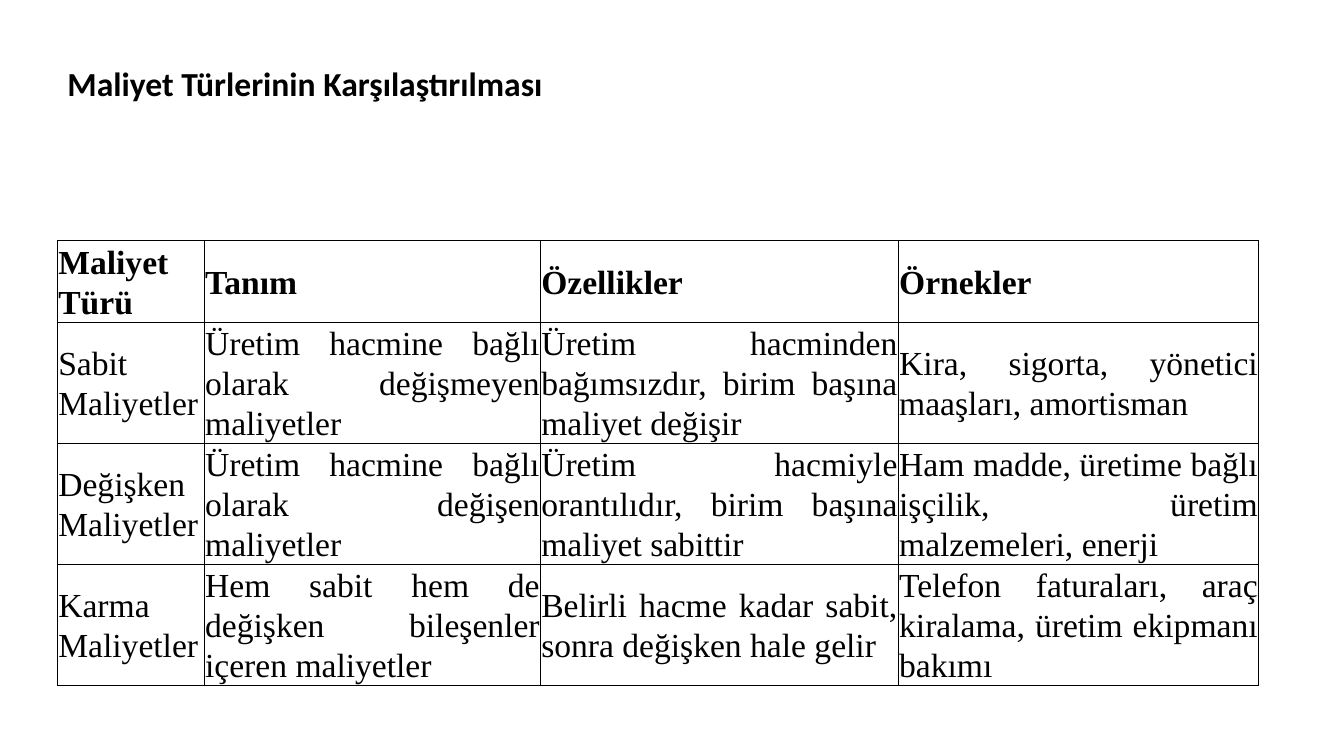
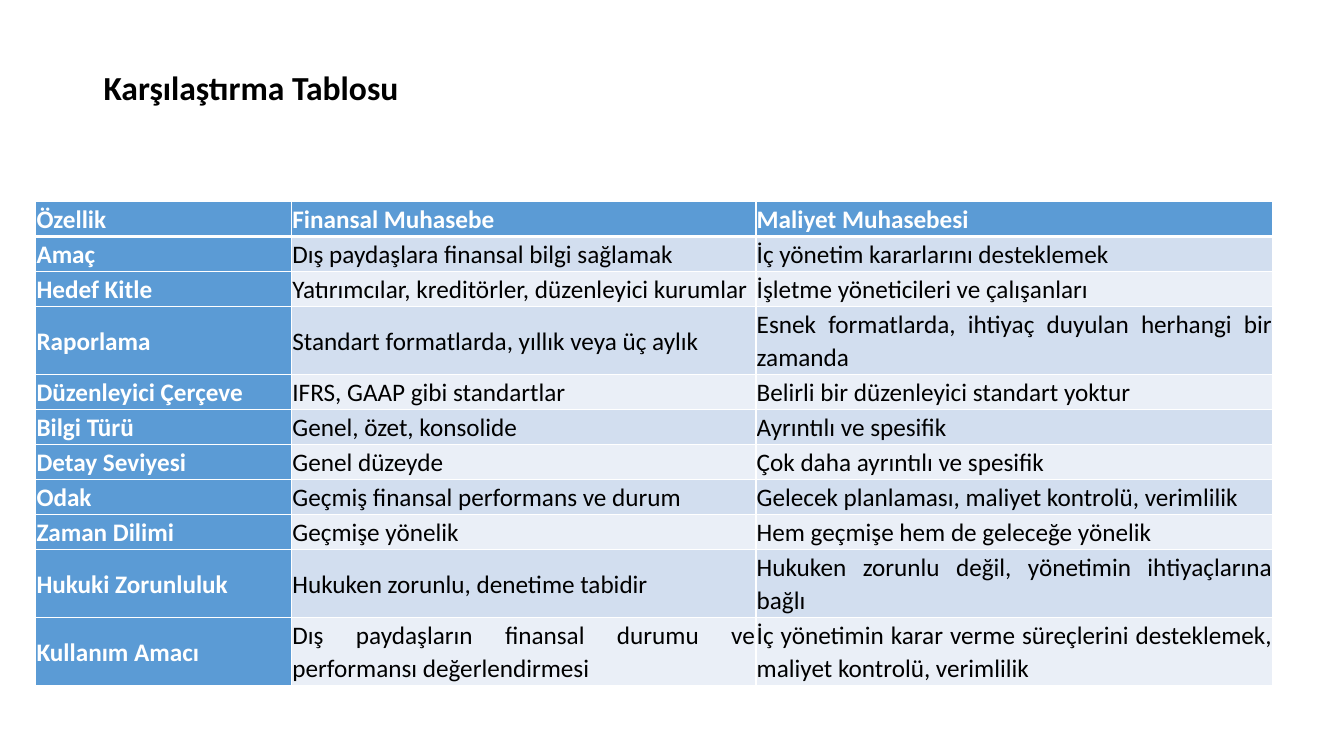
import lxml.etree
import pptx
import pptx.dml.color
import pptx.enum.text
import pptx.oxml.ns
import pptx.util

Cm = pptx.util.Cm
Pt = pptx.util.Pt

COLORS = {
    "black": "000000",
    "white": "FFFFFF",
    "header": "5B9BD5",
    "band_dark": "D2DEEF",
    "band_light": "EAEFF7",
}
TITLE_FONT = "Calibri"
TITLE_SIZE = 24
CELL_INSET = Cm(0.02)
LINE_SPACING = 1.07


def format_text(frame, text, font, size, color, bold):
    """Fill a text frame with one justified, vertically centred paragraph."""
    frame.text = text
    frame.word_wrap = True
    para = frame.paragraphs[0]
    para.alignment = pptx.enum.text.PP_ALIGN.JUSTIFY
    span = para.runs[0]
    span.font.name = font
    span.font.size = Pt(size)
    span.font.bold = bold
    span.font.color.rgb = pptx.dml.color.RGBColor.from_string(COLORS[color])
    return para


def add_border(cell, side, color, width):
    """Draw one edge of a cell: side is L, R, T or B."""
    qn = pptx.oxml.ns.qn
    properties = cell._tc.get_or_add_tcPr()
    line = lxml.etree.SubElement(properties, qn("a:ln" + side), w=str(Pt(width)))
    fill = lxml.etree.SubElement(line, qn("a:solidFill"))
    lxml.etree.SubElement(fill, qn("a:srgbClr"), val=COLORS[color])


# Slide contents
pages = [
    {
        "title": "Maliyet Türlerinin Karşılaştırılması",
        "title_box": (1.45, 1.47, 30.27, 1.27),
        "table_at": (1.45, 6.07),
        "columns": [3.7, 8.47, 9.02, 9.08],
        "row_heights": [2.05] + [3.05] * 3,
        "font": "Times New Roman",
        "size": 24,
        "border": "black",
        "filled": False,
        "rows": [
            ["Maliyet Türü", "Tanım", "Özellikler", "Örnekler"],
            ["Sabit Maliyetler",
             "Üretim hacmine bağlı olarak değişmeyen maliyetler",
             "Üretim hacminden bağımsızdır, birim başına maliyet değişir",
             "Kira, sigorta, yönetici maaşları, amortisman"],
            ["Değişken Maliyetler",
             "Üretim hacmine bağlı olarak değişen maliyetler",
             "Üretim hacmiyle orantılıdır, birim başına maliyet sabittir",
             "Ham madde, üretime bağlı işçilik, üretim malzemeleri, enerji"],
            ["Karma Maliyetler",
             "Hem sabit hem de değişken bileşenler içeren maliyetler",
             "Belirli hacme kadar sabit, sonra değişken hale gelir",
             "Telefon faturaları, araç kiralama, üretim ekipmanı bakımı"],
        ],
    },
    {
        "title": "Karşılaştırma Tablosu",
        "title_box": (2.36, 1.55, 30, 1.27),
        "table_at": (0.9, 5.08),
        "columns": [6.45, 11.7, 13.03],
        "row_heights": [0.88] * 3 + [1.72] + [0.88] * 5 + [1.72] * 2,
        "font": "Calibri",
        "size": 18,
        "border": "white",
        "filled": True,
        "rows": [
            ["Özellik", "Finansal Muhasebe", "Maliyet Muhasebesi"],
            ["Amaç", "Dış paydaşlara finansal bilgi sağlamak",
             "İç yönetim kararlarını desteklemek"],
            ["Hedef Kitle", "Yatırımcılar, kreditörler, düzenleyici kurumlar",
             "İşletme yöneticileri ve çalışanları"],
            ["Raporlama", "Standart formatlarda, yıllık veya üç aylık",
             "Esnek formatlarda, ihtiyaç duyulan herhangi bir zamanda"],
            ["Düzenleyici Çerçeve", "IFRS, GAAP gibi standartlar",
             "Belirli bir düzenleyici standart yoktur"],
            ["Bilgi Türü", "Genel, özet, konsolide", "Ayrıntılı ve spesifik"],
            ["Detay Seviyesi", "Genel düzeyde", "Çok daha ayrıntılı ve spesifik"],
            ["Odak", "Geçmiş finansal performans ve durum",
             "Gelecek planlaması, maliyet kontrolü, verimlilik"],
            ["Zaman Dilimi", "Geçmişe yönelik", "Hem geçmişe hem de geleceğe yönelik"],
            ["Hukuki Zorunluluk", "Hukuken zorunlu, denetime tabidir",
             "Hukuken zorunlu değil, yönetimin ihtiyaçlarına bağlı"],
            ["Kullanım Amacı",
             "Dış paydaşların finansal durumu ve performansı değerlendirmesi",
             "İç yönetimin karar verme süreçlerini desteklemek, maliyet kontrolü, verimlilik"],
        ],
    },
]

deck = pptx.Presentation()
deck.slide_width = Cm(33.87)
deck.slide_height = Cm(19.05)

for page in pages:
    slide = deck.slides.add_slide(deck.slide_layouts[6])

    # Table grid
    left, top = page["table_at"]
    columns, heights = page["columns"], page["row_heights"]
    table = slide.shapes.add_table(
        len(heights), len(columns),
        Cm(left), Cm(top), Cm(sum(columns)), Cm(sum(heights))).table
    table.first_row = page["filled"]
    table.first_col = page["filled"]
    table.horz_banding = page["filled"]
    for column, width in zip(table.columns, columns):
        column.width = Cm(width)
    for row, height in zip(table.rows, heights):
        row.height = Cm(height)

    # Table cells
    for row_index, texts in enumerate(page["rows"]):
        for column_index, text in enumerate(texts):
            cell = table.cell(row_index, column_index)
            is_header = row_index == 0 or (page["filled"] and column_index == 0)
            color = "white" if page["filled"] and is_header else "black"
            para = format_text(cell.text_frame, text, page["font"], page["size"],
                               color, is_header)
            para.line_spacing = LINE_SPACING
            cell.vertical_anchor = pptx.enum.text.MSO_ANCHOR.MIDDLE
            cell.margin_left = cell.margin_right = CELL_INSET
            cell.margin_top = cell.margin_bottom = CELL_INSET

            # Filled tables have a thick rule between header and body
            for side in "LRTB":
                under_header = (row_index, side) in ((0, "B"), (1, "T"))
                add_border(cell, side, page["border"],
                           3 if page["filled"] and under_header else 1)

            if page["filled"]:
                band = "band_dark" if row_index % 2 else "band_light"
                cell.fill.solid()
                cell.fill.fore_color.rgb = pptx.dml.color.RGBColor.from_string(
                    COLORS["header" if is_header else band])
            else:
                cell.fill.background()

    # Title
    box = slide.shapes.add_textbox(*[Cm(length) for length in page["title_box"]])
    format_text(box.text_frame, page["title"], TITLE_FONT, TITLE_SIZE, "black", True)
    box.text_frame.vertical_anchor = pptx.enum.text.MSO_ANCHOR.MIDDLE
    box.text_frame.auto_size = pptx.enum.text.MSO_AUTO_SIZE.SHAPE_TO_FIT_TEXT

deck.save("out.pptx")
